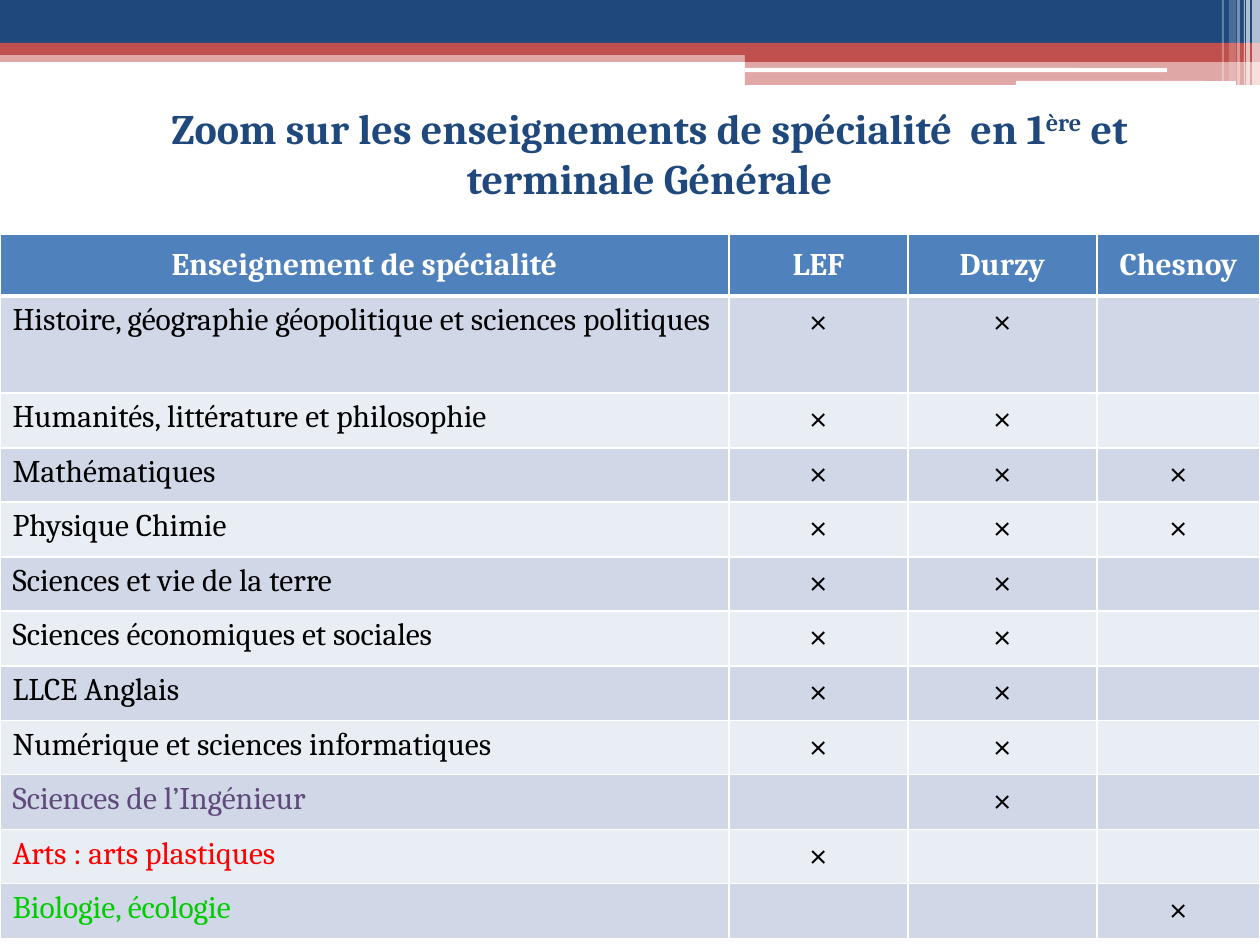
from dataclasses import dataclass

import pptx
import pptx.dml.color
import pptx.enum.shapes
import pptx.enum.text
import pptx.oxml
import pptx.oxml.ns
import pptx.util

EMU_PER_PX = 914400 / 126
FONT = "Cambria"
COLORS = {
    "navy": "1F497D", "red": "C0504D", "white": "FFFFFF", "black": "000000",
    "header": "4F81BD", "band_dark": "D0D8E8", "band_light": "E9EDF4",
    "engineering": "604A7B", "arts": "FF0000", "biology": "00CC00",
}
RECT = pptx.enum.shapes.MSO_SHAPE.RECTANGLE
ROUNDED = pptx.enum.shapes.MSO_SHAPE.ROUNDED_RECTANGLE
CENTER = pptx.enum.text.PP_ALIGN.CENTER
LEFT = pptx.enum.text.PP_ALIGN.LEFT
TOP = pptx.enum.text.MSO_ANCHOR.TOP
MIDDLE = pptx.enum.text.MSO_ANCHOR.MIDDLE


@dataclass(frozen=True)
class Band:
    left: int
    top: int
    width: int
    height: int
    color: str
    opacity: int = 100
    outline: int = RECT


@dataclass(frozen=True)
class Subject:
    name: str
    schools: tuple[str, ...]
    color: str = "black"


BANDS = (
    Band(0, 50, 1260, 12, "red", 50),
    Band(0, 0, 1260, 43, "navy"),
    Band(0, 43, 1260, 12, "red"),
    Band(745, 49, 515, 13, "red"),
    Band(745, 61, 515, 24, "red", 50),
    Band(745, 68, 422, 4, "white", outline=ROUNDED),
    Band(1016, 81, 220, 5, "white", outline=ROUNDED),
    Band(1252, 0, 8, 85, "white", 65),
    Band(1246, 0, 4, 85, "white", 65),
    Band(1244, 0, 1, 85, "white", 60),
    Band(1237, 0, 3, 85, "white", 40),
    Band(1229, 0, 7, 81, "white", 20),
    Band(1222, 0, 2, 81, "white", 30),
)

SCHOOLS = ("LEF", "Durzy", "Chesnoy")
BOTH = SCHOOLS[:2]
SUBJECTS = (
    Subject("Histoire, géographie géopolitique et sciences politiques", BOTH),
    Subject("Humanités, littérature et philosophie", BOTH),
    Subject("Mathématiques", SCHOOLS),
    Subject("Physique Chimie", SCHOOLS),
    Subject("Sciences et vie de la terre", BOTH),
    Subject("Sciences économiques et sociales", BOTH),
    Subject("LLCE Anglais", BOTH),
    Subject("Numérique et sciences informatiques", BOTH),
    Subject("Sciences de l’Ingénieur", ("Durzy",), "engineering"),
    Subject("Arts : arts plastiques", ("LEF",), "arts"),
    Subject("Biologie, écologie", ("Chesnoy",), "biology"),
)
COLUMN_WIDTHS = (729, 179, 189, 163)
TABLE_TOP, HEADER_HEIGHT, FIRST_HEIGHT, TABLE_BOTTOM = 234, 62, 97, 939


def px(length: int) -> int:
    return round(length * EMU_PER_PX)


def rgb(color: str) -> pptx.dml.color.RGBColor:
    return pptx.dml.color.RGBColor.from_string(COLORS[color])


def write(paragraph, text: str, *, size: int = 18, color: str = "black",
          bold: bool = False, align: int = LEFT, raised: bool = False) -> None:
    paragraph.alignment = align
    run = paragraph.add_run()
    run.text = text
    run.font.name = FONT
    run.font.size = pptx.util.Pt(size)
    run.font.bold = bold
    run.font.color.rgb = rgb(color)
    if raised:
        run.font._element.set("baseline", "30000")


def draw_band(slide, band: Band) -> None:
    strip = slide.shapes.add_shape(
        band.outline, px(band.left), px(band.top), px(band.width), px(band.height))
    strip.shadow.inherit = False
    strip.line.fill.background()
    strip.fill.solid()
    strip.fill.fore_color.rgb = rgb(band.color)
    if band.opacity < 100:
        tint = strip._element.spPr.find(".//" + pptx.oxml.ns.qn("a:srgbClr"))
        alpha = tint.makeelement(pptx.oxml.ns.qn("a:alpha"), {"val": str(band.opacity * 1000)})
        tint.append(alpha)


def style_cell(cell, fill: str, anchor: int, top: int = 1, bottom: int = 1) -> None:
    cell.fill.solid()
    cell.fill.fore_color.rgb = rgb(fill)
    cell.vertical_anchor = anchor
    properties = cell._tc.get_or_add_tcPr()
    borders = {"lnL": 1, "lnR": 1, "lnT": top, "lnB": bottom}
    for position, (side, points) in enumerate(borders.items()):
        properties.insert(position, pptx.oxml.parse_xml(
            f'<a:{side} {pptx.oxml.ns.nsdecls("a")} w="{pptx.util.Pt(points)}">'
            f'<a:solidFill><a:srgbClr val="{COLORS["white"]}"/></a:solidFill></a:{side}>'))


def draw_title(slide) -> None:
    title = slide.shapes.title
    title.left, title.top, title.width, title.height = px(128), px(96), px(1043), px(115)
    frame = title.text_frame
    frame.word_wrap = True
    frame.auto_size = pptx.enum.text.MSO_AUTO_SIZE.NONE
    frame.vertical_anchor = TOP
    for text, raised in (("Zoom sur les enseignements de spécialité  en 1", False),
                         ("ère", True), (" et terminale Générale", False)):
        write(frame.paragraphs[0], text, size=24, color="navy", bold=True,
              align=CENTER, raised=raised)


def draw_subjects(slide) -> None:
    first_bottom = TABLE_TOP + HEADER_HEIGHT + FIRST_HEIGHT
    regular = len(SUBJECTS) - 1
    edges = [TABLE_TOP, TABLE_TOP + HEADER_HEIGHT] + [
        round(first_bottom + (TABLE_BOTTOM - first_bottom) * step / regular)
        for step in range(regular + 1)]
    table = slide.shapes.add_table(
        len(SUBJECTS) + 1, len(COLUMN_WIDTHS), 0, px(TABLE_TOP),
        px(sum(COLUMN_WIDTHS)), px(TABLE_BOTTOM - TABLE_TOP)).table
    for column, width in zip(table.columns, COLUMN_WIDTHS):
        column.width = px(width)
    for row, top, bottom in zip(table.rows, edges, edges[1:]):
        row.height = px(bottom - top)

    for column, heading in enumerate(("Enseignement de spécialité",) + SCHOOLS):
        cell = table.cell(0, column)
        style_cell(cell, "header", MIDDLE, bottom=3)
        write(cell.text_frame.paragraphs[0], heading, color="white", bold=True, align=CENTER)

    for row, subject in enumerate(SUBJECTS, start=1):
        fill = "band_dark" if row % 2 else "band_light"
        for column in range(len(COLUMN_WIDTHS)):
            cell = table.cell(row, column)
            style_cell(cell, fill, TOP, top=3 if row == 1 else 1)
            paragraph = cell.text_frame.paragraphs[0]
            if column == 0:
                write(paragraph, subject.name, color=subject.color)
            elif SCHOOLS[column - 1] in subject.schools:
                write(paragraph, "×", size=20, align=CENTER)


def main() -> None:
    presentation = pptx.Presentation()
    presentation.slide_width, presentation.slide_height = px(1260), px(945)
    slide = presentation.slides.add_slide(presentation.slide_layouts[5])
    for band in BANDS:
        draw_band(slide, band)
    draw_title(slide)
    draw_subjects(slide)
    presentation.save("out.pptx")


if __name__ == "__main__":
    main()
